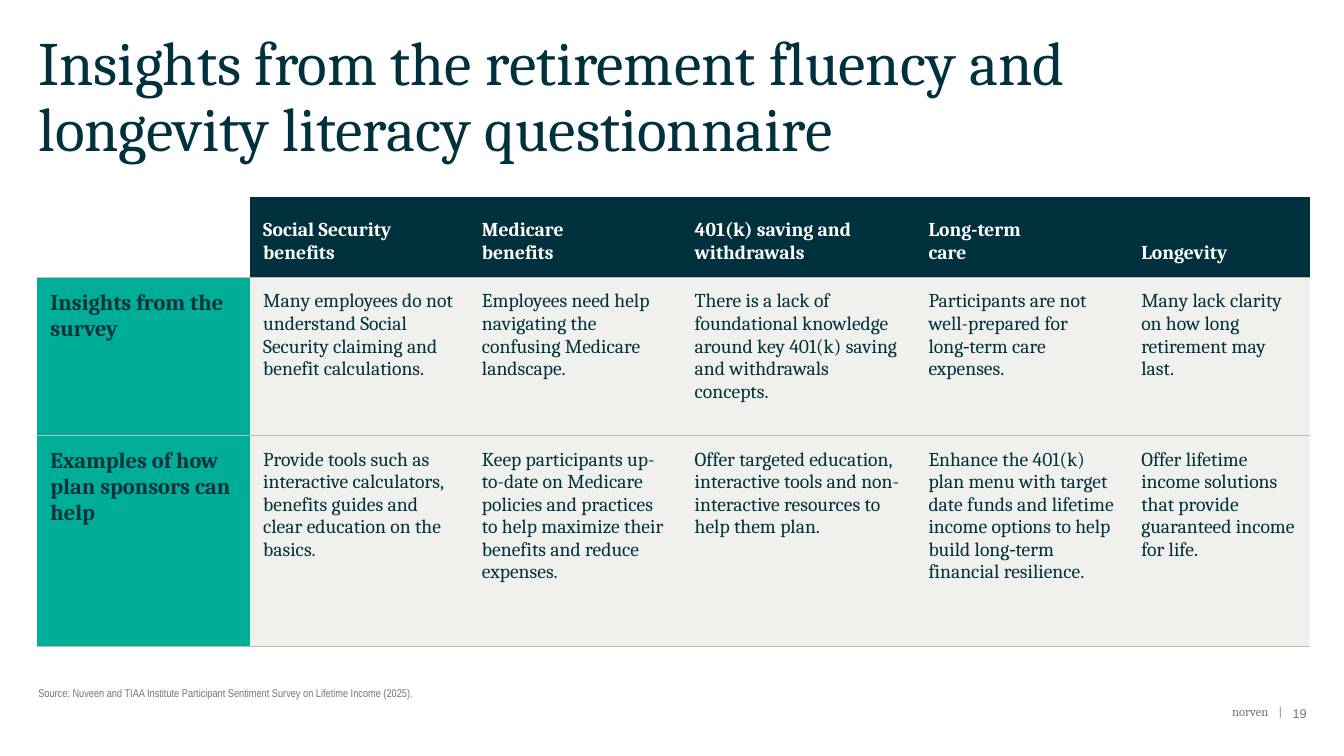
"""Builds the slide on retirement fluency insights."""
from pptx import Presentation
from pptx import util as u
from pptx.dml import color
from pptx.enum import text
from pptx.oxml import ns, parse_xml

INK, TEAL, SAND, GREY, RULE, WHITE = "00313C", "00AD97", "E3E5DC", "747476", "BABCBC", "FFFFFF"
COLUMNS = [15.83, 16.28, 15.83, 17.4, 15.83, 13.5]
ROWS = [10.67, 20.93, 27.87]
CONTENT = [
    ["", "Social Security benefits", "Medicare \vbenefits", "401(k) saving and withdrawals",
     "Long-term \vcare", "Longevity"],
    ["Insights from the survey",
     "Many employees do not understand Social Security claiming and benefit calculations.",
     "Employees need help navigating the confusing Medicare landscape.",
     "There is a lack of foundational knowledge around key 401(k) saving and withdrawals concepts.",
     "Participants are not well-prepared for long‑term care expenses.",
     "Many lack clarity on how long retirement may last."],
    ["Examples of how plan sponsors can help",
     "Provide tools such as interactive calculators, benefits guides and clear education on the basics.",
     "Keep participants up-to-date on Medicare policies and practices to help maximize their benefits "
     "and reduce expenses.",
     "Offer targeted education, interactive tools and non-interactive resources to help them plan.",
     "Enhance the 401(k) plan menu with target date funds and lifetime income options to help build "
     "long‑term financial resilience.",
     "Offer lifetime income solutions that provide guaranteed income for life."],
]


def rgb(value):
    """Turn a hex string into a colour."""
    return color.RGBColor.from_string(value)


class Page:
    """Holds the deck, the current slide and its style."""

    def __init__(self):
        """Open a wide deck with one title and body slide."""
        self.deck = Presentation()
        self.deck.slide_width, self.deck.slide_height = u.Inches(13.33), u.Inches(7.5)
        self.slide = self.deck.slides.add_slide(self.deck.slide_layouts[1])

    def across(self, percent):
        """Return a share of the slide's width."""
        return u.Emu(round(self.deck.slide_width * percent / 100))

    def down(self, percent):
        """Return a share of the slide's height."""
        return u.Emu(round(self.deck.slide_height * percent / 100))

    def area(self, left, top, width, height):
        """Turn percentages into a position and a size."""
        return self.across(left), self.down(top), self.across(width), self.down(height)

    def set_text(self, frame, words, size, ink, font="Cambria", bold=False,
                 align=text.PP_ALIGN.LEFT, spacing=None):
        """Fill a text frame with one styled paragraph."""
        frame.text = words
        frame.word_wrap = True
        para = frame.paragraphs[0]
        para.alignment, para.line_spacing = align, spacing
        para.space_before = u.Pt(0)
        for span in para.runs:
            span.font.name, span.font.size, span.font.bold = font, u.Pt(size), bold
            span.font.color.rgb = rgb(ink)

    def fit(self, frame, anchor):
        """Remove margins and autofit from a text frame."""
        frame.margin_left = frame.margin_right = frame.margin_top = frame.margin_bottom = 0
        frame.auto_size = text.MSO_AUTO_SIZE.NONE
        frame.vertical_anchor = anchor

    def placeholder(self, index, area, words, size, ink, anchor=text.MSO_ANCHOR.TOP, **style):
        """Move and fill a template placeholder without a bullet."""
        box = self.slide.placeholders[index]
        box.left, box.top, box.width, box.height = self.area(*area)
        self.fit(box.text_frame, anchor)
        self.set_text(box.text_frame, words, size, ink, **style)
        properties = box.text_frame.paragraphs[0]._p.get_or_add_pPr()
        properties.set("marL", "0")
        properties.set("indent", "0")
        properties.append(parse_xml(f"<a:buNone {ns.nsdecls('a')}/>"))

    def label(self, area, words, font="Cambria"):
        """Add a small right-aligned footer text."""
        box = self.slide.shapes.add_textbox(*self.area(*area))
        self.fit(box.text_frame, text.MSO_ANCHOR.TOP)
        self.set_text(box.text_frame, words, 9, GREY, font, align=text.PP_ALIGN.RIGHT)

    def borders(self, cell, ruled):
        """Draw the named sides of a cell and hide the others."""
        line = f'<a:solidFill><a:srgbClr val="{RULE}"/></a:solidFill>'
        for side in "LRTB":
            stroke = line if side in ruled else "<a:noFill/>"
            cell._tc.get_or_add_tcPr().append(parse_xml(
                f'<a:ln{side} {ns.nsdecls("a")} w="6350">{stroke}</a:ln{side}>'))

    def paint(self, cell, fill, opacity=100):
        """Fill a cell with a colour of the given opacity."""
        cell.fill.solid()
        cell.fill.fore_color.rgb = rgb(fill)
        if opacity < 100:
            shade = cell._tc.tcPr.find(ns.qn("a:solidFill"))[0]
            shade.append(parse_xml(f'<a:alpha {ns.nsdecls("a")} val="{opacity * 1000}"/>'))

    def table(self, left, top, content, columns, rows):
        """Add a table with a header row and a header column."""
        area = self.area(left, top, sum(columns), sum(rows))
        grid = self.slide.shapes.add_table(len(rows), len(columns), *area).table
        grid.first_row = grid.horz_banding = False
        for column, share in zip(grid.columns, columns):
            column.width = self.across(share)
        for row, share in zip(grid.rows, rows):
            row.height = self.down(share)
        for r, line in enumerate(content):
            for c, words in enumerate(line):
                self.cell(grid.cell(r, c), words, r == 0, c == 0)

    def cell(self, cell, words, header, side):
        """Style one cell by its place in the table."""
        cell.margin_left = cell.margin_right = cell.margin_top = cell.margin_bottom = u.Inches(0.13)
        cell.vertical_anchor = text.MSO_ANCHOR.BOTTOM if header else text.MSO_ANCHOR.TOP
        self.borders(cell, "B" if header else "TB")
        if header and side:
            cell.fill.background()
        elif header:
            self.paint(cell, INK)
        elif side:
            self.paint(cell, TEAL)
        else:
            self.paint(cell, SAND, 50)
        self.set_text(cell.text_frame, words, 16 if side else 14, WHITE if header else INK,
                      bold=header or side)


def main():
    """Build and save the slide."""
    page = Page()
    page.placeholder(0, (2.85, 4.27, 94.52, 17.87),
                     "Insights from the retirement fluency and longevity literacy questionnaire",
                     44, INK, spacing=0.9)
    page.table(2.78, 26, CONTENT, COLUMNS, ROWS)
    page.placeholder(1, (2.85, 87.2, 94.52, 5.33),
                     "Source: Nuveen and TIAA Institute Participant Sentiment Survey on Lifetime Income (2025).",
                     8, GREY, text.MSO_ANCHOR.BOTTOM, font="Arial Narrow")
    page.label((88.3, 93.07, 6.07, 2.67), "norven")
    page.label((94.4, 93.07, 1.02, 2.67), "|")
    page.label((94.67, 93.33, 2.55, 5.33), "19", "Arial")
    page.deck.save("out.pptx")


if __name__ == "__main__":
    main()
